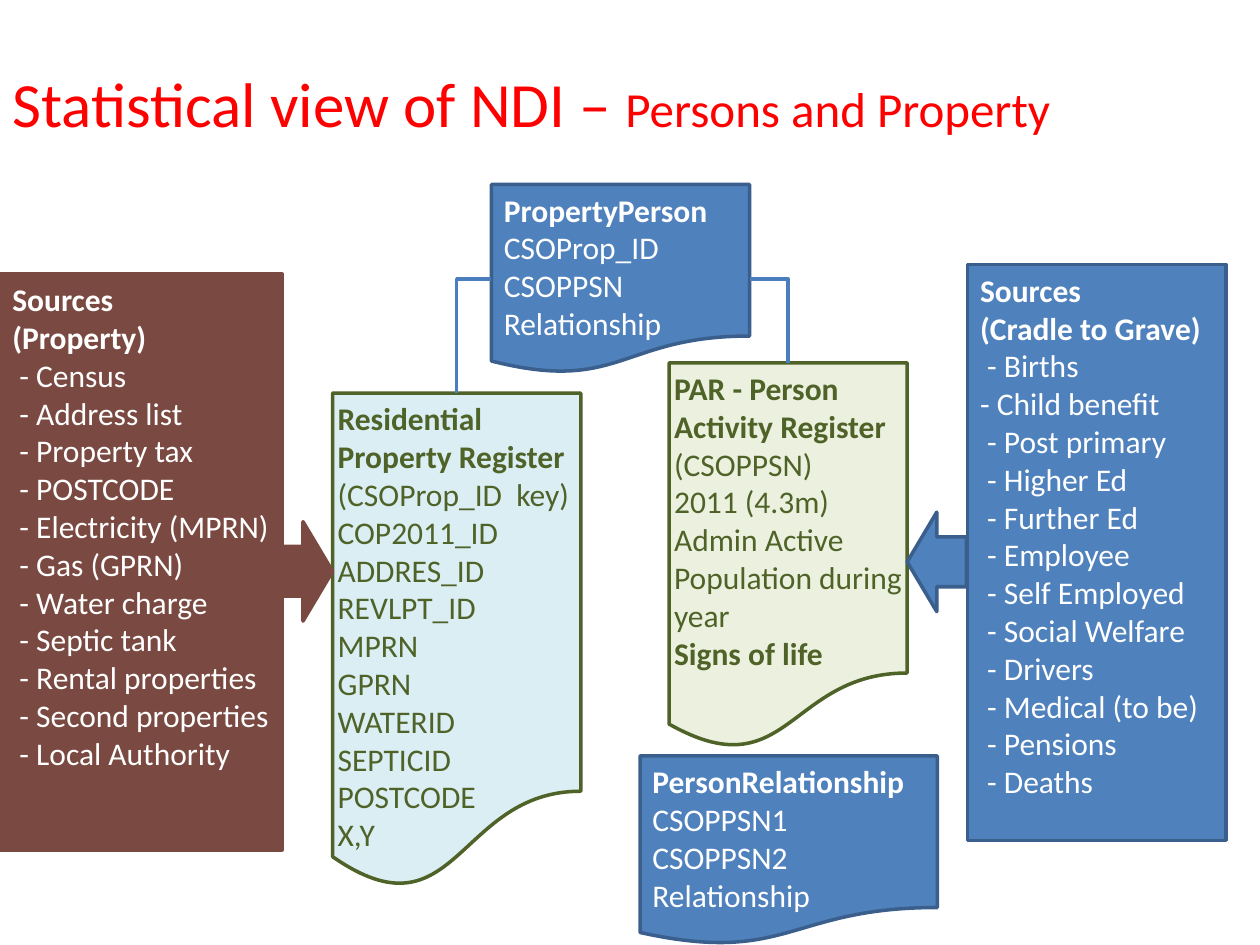
"""Builds the slide on the statistical view of NDI: registers, their sources and links."""
from lxml import etree
from pptx import Presentation
from pptx import util as u
from pptx.dml.color import RGBColor
from pptx.enum import shapes, text
from pptx.oxml.ns import qn

COLOURS = {
    "red": "FF0000", "white": "FFFFFF", "blue": "4F81BD", "navy": "3A5F8C",
    "link": "4B7EBC", "brown": "7A4A42", "olive": "4F6228",
    "pale green": "EBF1DE", "pale blue": "DBEEF4",
}
FONT = "Calibri"
TITLE = [("Statistical view of NDI – ", 36), ("Persons and Property", 28)]
TITLE_AREA = (0, 0, 96.5, 21.6)

STYLES = {
    "person": ("blue", "navy", "white", 0.1),
    "property": ("brown", "brown", "white", 0.1),
    "person register": ("pale green", "olive", "olive", 0.04),
    "property register": ("pale blue", "olive", "olive", 0.04),
}
DOCUMENT = shapes.MSO_SHAPE.FLOWCHART_DOCUMENT
RECTANGLE = shapes.MSO_SHAPE.RECTANGLE

BOXES = {
    "par": (DOCUMENT, "person register", (53.1, 38.4, 18.9, 40.93), [
        "*PAR - Person Activity Register", "(CSOPPSN)", "2011 (4.3m)",
        "Admin Active Population during year", "*Signs of life"]),
    "person sources": (RECTANGLE, "person", (76.8, 28, 20.5, 60.93), [
        "*Sources", "*(Cradle to Grave)", " - Births", "- Child benefit",
        " - Post primary", " - Higher Ed", " - Further Ed", " - Employee",
        " - Self Employed", " - Social Welfare", " - Drivers",
        " - Medical (to be)", " - Pensions", " - Deaths"]),
    "residential": (DOCUMENT, "property register", (26.4, 41.6, 19.7, 52.53), [
        "*Residential Property Register", "(CSOProp_ID  key)", "COP2011_ID",
        "ADDRES_ID", "REVLPT_ID", "MPRN", "GPRN", "WATERID", "SEPTICID",
        "POSTCODE", "X,Y"]),
    "property sources": (RECTANGLE, "property", (0, 29, 22.4, 60.93), [
        "*Sources", "*(Property)", " - Census", " - Address list",
        " - Property tax", " - POSTCODE", " - Electricity (MPRN)",
        " - Gas (GPRN)", " - Water charge", " - Septic tank",
        " - Rental properties", " - Second properties", " - Local Authority"]),
    "property person": (DOCUMENT, "person", (39, 19.53, 20.5, 20), [
        "*PropertyPerson", "CSOProp_ID", "CSOPPSN", "Relationship"]),
    "person relationship": (DOCUMENT, "person", (50.8, 80, 23.6, 20), [
        "*PersonRelationship", "CSOPPSN1", "CSOPPSN2", "Relationship"]),
}
ARROW_WIDTH, ARROW_HEIGHT, ARROW_DROP = 4.7, 10.53, 1

deck = Presentation()
deck.slide_width, deck.slide_height = u.Inches(10), u.Inches(7.5)
slide = deck.slides.add_slide(deck.slide_layouts[6])


def colour(name):
    return RGBColor.from_string(COLOURS[name])


def place(area):
    sizes = (deck.slide_width, deck.slide_height) * 2
    return [round(size * share / 100) for size, share in zip(sizes, area)]


def style_run(run, size, name, bold=False):
    run.font.name, run.font.size, run.font.bold = FONT, u.Pt(size), bold
    run.font.color.rgb = colour(name)


def add_block(preset, style, area):
    fill, outline = STYLES[style][:2]
    block = slide.shapes.add_shape(preset, *place(area))
    block.shadow.inherit = False
    block.fill.solid()
    block.fill.fore_color.rgb = colour(fill)
    block.line.color.rgb = colour(outline)
    block.line.width = u.Pt(2)
    return block


def add_box(preset, style, area, lines):
    box = add_block(preset, style, area)
    ink, inset = STYLES[style][2:]
    frame = box.text_frame
    frame.word_wrap = True
    frame.vertical_anchor = text.MSO_ANCHOR.TOP
    frame.margin_left = frame.margin_right = u.Inches(inset)
    frame.text = "\n".join(line.lstrip("*") for line in lines)
    for paragraph, line in zip(frame.paragraphs, lines):
        paragraph.alignment = text.PP_ALIGN.LEFT
        style_run(paragraph.runs[0], 18, ink, line.startswith("*"))
    return box


def add_arrow(preset, sources, left):
    style, (_, top, _, height) = BOXES[sources][1:3]
    arrow_top = top + height / 2 + ARROW_DROP - ARROW_HEIGHT / 2
    add_block(preset, style, (left, arrow_top, ARROW_WIDTH, ARROW_HEIGHT))


def add_link(start_x, start_y, register):
    end_x = register.left + register.width // 2
    link = slide.shapes.add_connector(
        shapes.MSO_CONNECTOR.ELBOW, start_x, start_y, end_x, register.top)
    link.line.color.rgb = colour("link")
    link.line.width = u.Pt(2)
    properties = link._element.spPr
    properties.find(qn("a:prstGeom")).set("prst", "bentConnector2")
    etree.SubElement(properties, qn("a:effectLst"))


boxes = {name: add_box(*details) for name, details in BOXES.items()}

par_left, _, par_width, _ = BOXES["par"][2]
add_arrow(shapes.MSO_SHAPE.LEFT_ARROW, "person sources", par_left + par_width)
add_arrow(shapes.MSO_SHAPE.RIGHT_ARROW, "property sources",
          BOXES["residential"][2][0] - ARROW_WIDTH)

bridge = boxes["property person"]
bridge_middle = bridge.top + bridge.height // 2
add_link(bridge.left, bridge_middle, boxes["residential"])
add_link(bridge.left + bridge.width, bridge_middle, boxes["par"])

title = slide.shapes.add_textbox(*place(TITLE_AREA)).text_frame
title.word_wrap = True
title.vertical_anchor = text.MSO_ANCHOR.MIDDLE
for words, size in TITLE:
    part = title.paragraphs[0].add_run()
    part.text = words
    style_run(part, size, "red")

deck.save("out.pptx")
